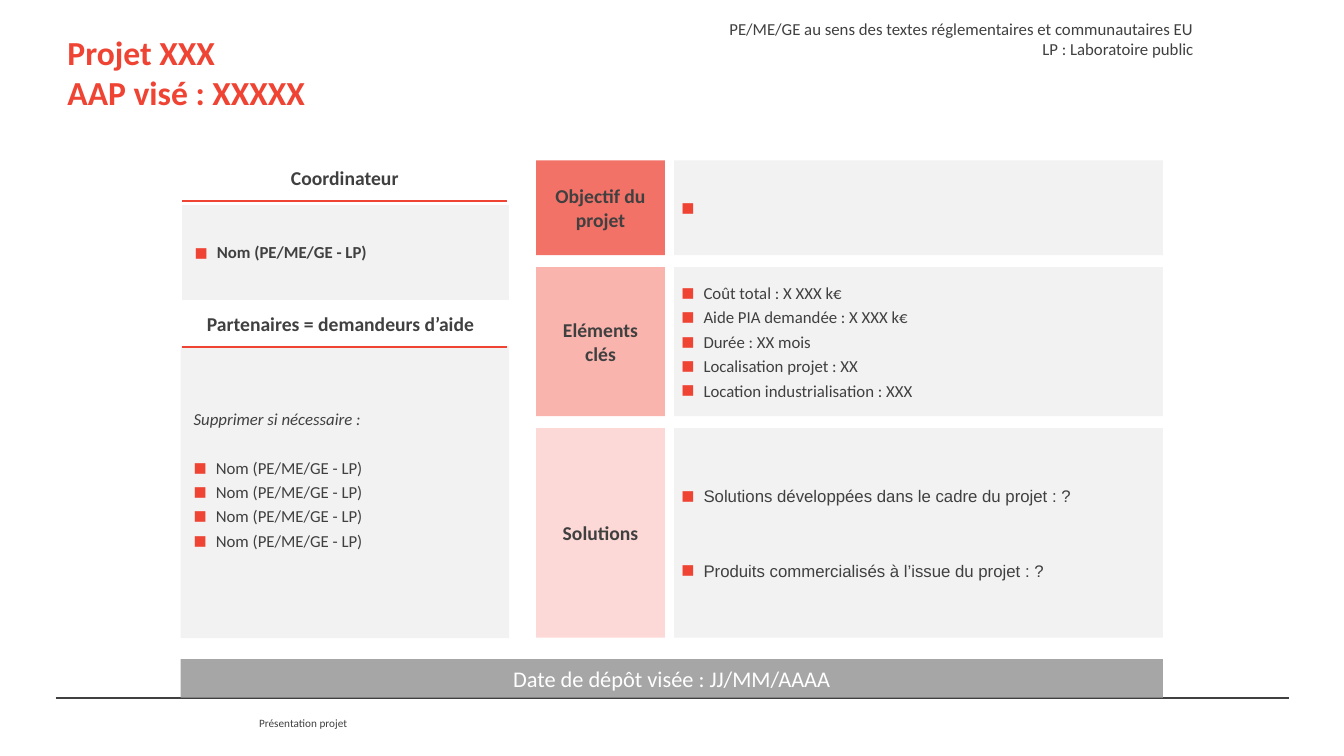
from lxml.etree import SubElement
from pptx import Presentation
from pptx.dml.color import RGBColor
from pptx.enum.shapes import MSO_CONNECTOR, MSO_SHAPE
from pptx.enum.text import MSO_ANCHOR, PP_ALIGN
from pptx.oxml.ns import qn
from pptx.util import Cm, Pt

HUES = {
    "red": "EF4333", "coral": "F27268", "salmon": "F9B4AD", "blush": "FCD9D6",
    "ink": "404040", "pale": "F2F2F2", "grey": "A6A6A6", "white": "FFFFFF",
}
LEFT, WIDE = 4.55, 8.28  # partner column
NAME = "Nom (PE/ME/GE - LP)"


def hue(name):
    return RGBColor.from_string(HUES[name])


def bullet(para):
    props = para._p.get_or_add_pPr()
    props.set("marL", str(Cm(0.64)))
    props.set("indent", str(Cm(-0.56)))
    tint = SubElement(props, qn("a:buClr"))
    SubElement(tint, qn("a:srgbClr"), val=HUES["red"])
    SubElement(props, qn("a:buSzPct"), val="130000")
    SubElement(props, qn("a:buFont"), typeface="Arial")
    SubElement(props, qn("a:buChar"), char="■")


def write(frame, text, size=12, font="Calibri", color="ink", bold=False,
          italic=False, align=PP_ALIGN.LEFT, mark=False, before=0, after=0):
    """Add one paragraph to a text frame, filling its empty first one."""
    first = frame.paragraphs[0]
    para = frame.add_paragraph() if first.text else first
    para.text = text
    para.alignment = align
    para.space_before, para.space_after = Pt(before), Pt(after)
    if mark:
        bullet(para)
    for run in para.runs:
        face = run.font
        face.name, face.size = font, Pt(size)
        face.bold, face.italic = bold, italic
        face.color.rgb = hue(color)


def setup(frame, pads, anchor, wrap=True):
    frame.word_wrap = wrap
    frame.vertical_anchor = anchor
    (frame.margin_left, frame.margin_top,
     frame.margin_right, frame.margin_bottom) = [Cm(pad) for pad in pads]
    return frame


def panel(slide, x, y, w, h, fill, pads=(0, 0, 0, 0), anchor=MSO_ANCHOR.MIDDLE):
    shape = slide.shapes.add_shape(MSO_SHAPE.RECTANGLE, Cm(x), Cm(y), Cm(w), Cm(h))
    shape.shadow.inherit = False
    shape.fill.solid()
    shape.fill.fore_color.rgb = hue(fill)
    shape.line.fill.background()
    return setup(shape.text_frame, pads, anchor)


def label(slide, x, y, w, h, pads=(0, 0, 0, 0), anchor=MSO_ANCHOR.TOP, wrap=True):
    box = slide.shapes.add_textbox(Cm(x), Cm(y), Cm(w), Cm(h))
    return setup(box.text_frame, pads, anchor, wrap)


def rule(slide, x, y, end, color):
    line = slide.shapes.add_connector(
        MSO_CONNECTOR.STRAIGHT, Cm(x), Cm(y), Cm(end), Cm(y))
    line.line.color.rgb = hue(color)
    line.line.width = Pt(1.5)
    SubElement(line._element.spPr, qn("a:effectLst"))


def heading(slide, y, text, right=0.25):
    frame = panel(slide, LEFT, y, WIDE, 1.12, "white",
                  (0.25, 0.25, right, 0.25), MSO_ANCHOR.BOTTOM)
    write(frame, text, size=14, bold=True, align=PP_ALIGN.CENTER)
    rule(slide, LEFT + 0.05, y + 1.15, LEFT + WIDE - 0.05, "red")


def leader(slide):
    frame = slide.shapes.add_table(1, 1, Cm(4.57), Cm(5.16), Cm(8.26), Cm(2.44))
    cell = frame.table.cell(0, 0)
    cell.vertical_anchor = MSO_ANCHOR.MIDDLE
    # White bottom border, placed ahead of the cell fill
    edge = SubElement(cell._tc.get_or_add_tcPr(), qn("a:lnB"), w=str(Pt(3)))
    solid = SubElement(edge, qn("a:solidFill"))
    SubElement(solid, qn("a:srgbClr"), val=HUES["white"])
    cell.fill.solid()
    cell.fill.fore_color.rgb = hue("pale")
    write(cell.text_frame, NAME, bold=True, mark=True, after=3)


def topics(slide):
    facts = ["Coût total : X XXX k€", "Aide PIA demandée : X XXX k€",
             "Durée : XX mois", "Localisation projet : XX",
             "Location industrialisation : XXX"]
    goals = ["Solutions développées dans le cadre du projet : ?",
             "Produits commercialisés à l’issue du projet : ?"]
    rows = [  # title, fill, height, items, font, space between items
        ("Objectif du projet", "coral", 2.39, [" "], "Calibri", 0),
        ("Eléments\vclés", "salmon", 3.76, facts, "Calibri", 0),
        ("Solutions", "blush", 5.28, goals, "Arial", 36),
    ]
    y = 4.04
    for title, fill, high, items, font, gap in rows:
        head = panel(slide, 13.51, y, 3.25, high, fill)
        write(head, title, size=14, bold=True, align=PP_ALIGN.CENTER)
        body = panel(slide, 16.99, y, 12.32, high, "pale", (0.1, 0.1, 0.1, 0.1))
        for i, item in enumerate(items):
            write(body, item, font=font, mark=True,
                  before=gap if i else 0, after=3)
        y += high + 0.3


def main():
    deck = Presentation()
    deck.slide_width, deck.slide_height = Cm(33.87), Cm(19.05)
    slide = deck.slides.add_slide(deck.slide_layouts[6])

    # Footer
    foot = label(slide, 6.53, 18.06, 2.24, 0.33, wrap=False)
    write(foot, "Présentation projet", size=8)
    rule(slide, 1.4, 17.58, 32.49, "ink")

    # Title and note
    title = label(slide, 1.7, 0.76, 30.48, 2.13, (0, 0.13, 0, 0.13),
                  MSO_ANCHOR.MIDDLE)
    write(title, "Projet XXX\vAAP visé : XXXXX", size=24, color="red", bold=True)
    note = label(slide, 17.93, 0.33, 12.4, 1.27, (0.25, 0.13, 0.25, 0.13),
                 wrap=False)
    for text in ("PE/ME/GE au sens des textes réglementaires et communautaires EU",
                 "LP : Laboratoire public"):
        write(note, text, align=PP_ALIGN.RIGHT)

    # Coordinator and partners
    heading(slide, 3.91, "Coordinateur")
    leader(slide)
    team = panel(slide, LEFT, 8.71, WIDE, 7.37, "pale", (0.25, 0.13, 0.25, 0.75))
    write(team, "Supprimer si nécessaire :", italic=True, after=20.5)
    team.paragraphs[0]._p.get_or_add_pPr().set("marL", str(Cm(0.08)))
    for _ in range(4):
        write(team, NAME, mark=True, after=3)
    heading(slide, 7.59, "Partenaires = demandeurs d’aide", right=0.46)

    # Topics and date
    topics(slide)
    date = panel(slide, LEFT, 16.61, 24.76, 0.97, "grey")
    write(date, "Date de dépôt visée : JJ/MM/AAAA", size=16, color="white",
          align=PP_ALIGN.CENTER)

    deck.save("out.pptx")


if __name__ == "__main__":
    main()
